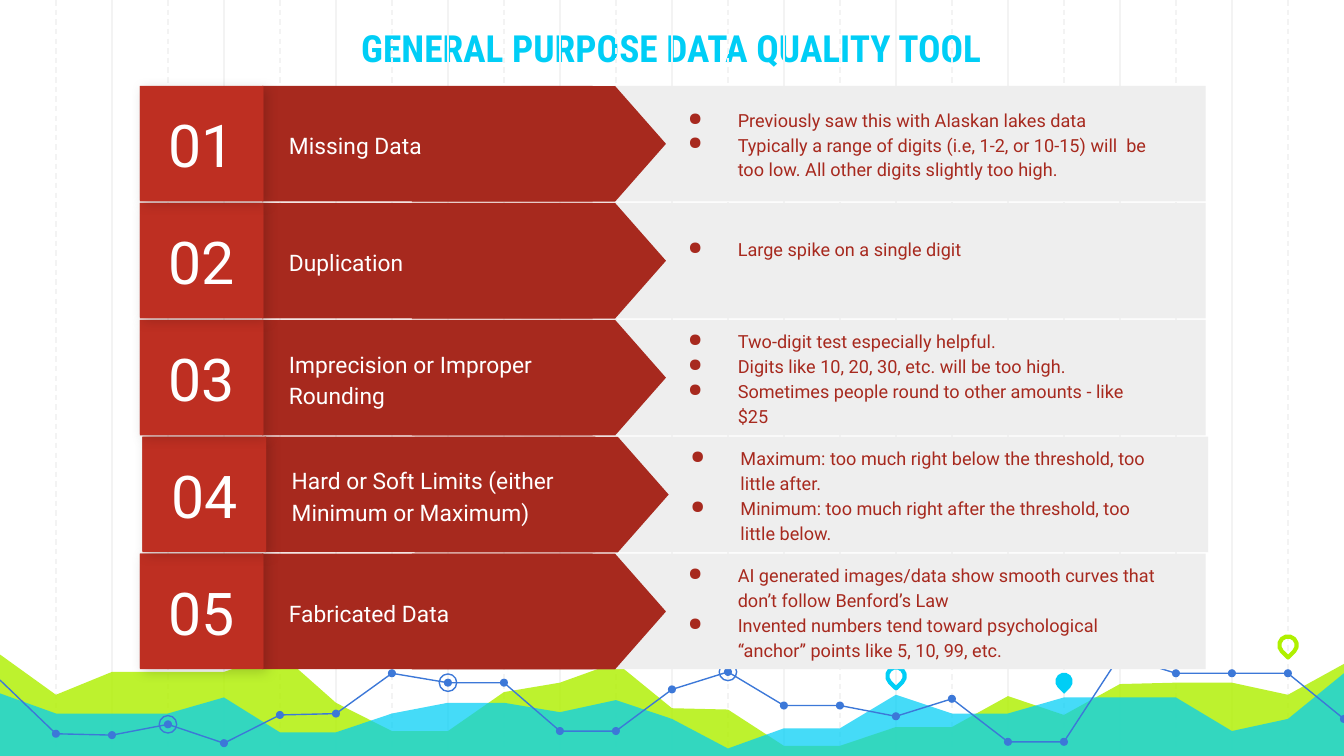
from lxml import etree
from pptx import Presentation
from pptx.dml.color import RGBColor
from pptx.enum.dml import MSO_LINE
from pptx.enum.shapes import MSO_CONNECTOR, MSO_SHAPE
from pptx.enum.text import MSO_ANCHOR, MSO_AUTO_SIZE, PP_ALIGN
from pptx.oxml.ns import qn
from pptx.util import Inches, Pt

RECT, OVAL, PIN = MSO_SHAPE.RECTANGLE, MSO_SHAPE.OVAL, MSO_SHAPE.TEAR
ARROW = MSO_SHAPE.FLOWCHART_OFFPAGE_CONNECTOR
CENTER, MIDDLE, BOTTOM = PP_ALIGN.CENTER, MSO_ANCHOR.MIDDLE, MSO_ANCHOR.BOTTOM

W, H = 10, 10 * 9 / 16
COLS = 24
COL = W / COLS
TOP, PITCH, ROW_H = 0.64, 0.87, 0.86
RED, BLUE, CYAN, LIME = "A7291E", "3C78D8", "00CEF6", "AFF000"

# Heights at each of the columns 0 to 24
LIME_HILLS = [4.87, 5.17, 5, 5, 5, 4.86, 5.23, 5.44, 5.44, 5.15, 5.08, 4.93, 5.27,
              5.28, 5.55, 5.55, 5.41, 5.41, 5.18, 5.32, 5.09, 5.08, 5.08, 5.17, 4.94]
CYAN_HILLS = [5.16, 5.31, 5.31, 5.31, 5.19, 5.45, 5.45, 5.31, 5.23, 5.23, 5.3, 5.21, 5.35,
              5.57, 5.42, 5.42, 5.17, 5.31, 5.31, 5.19, 5.19, 5.19, 5.44, 5.35, 5.01]
TREND = [5.06, 5.46, 5.47, 5.39, 5.53, 5.32, 5.31, 5.01, 5.08, 5.08, 5.44, 5.44, 5.13,
         5, 5.25, 5.25, 5.33, 5.2, 5.52, 5.52, 4.88, 5.01, 5.01, 5.01, 5.35]
PEAK = 20
RINGS = [3, 8, 13]

ROWS = [
    ("Missing Data", [
        "Previously saw this with Alaskan lakes data",
        "Typically a range of digits (i.e, 1-2, or 10-15) will  be too low. "
        "All other digits slightly too high."]),
    ("Duplication", ["Large spike on a single digit"]),
    ("Imprecision or Improper Rounding", [
        "Two-digit test especially helpful.",
        "Digits like 10, 20, 30, etc. will be too high.",
        "Sometimes people round to other amounts - like $25"]),
    ("Hard or Soft Limits (either Minimum or Maximum)", [
        "Maximum: too much right below the threshold, too little after.",
        "Minimum: too much right after the threshold, too little below."]),
    ("Fabricated Data", [
        "AI generated images/data show smooth curves that don’t follow Benford’s Law",
        "Invented numbers tend toward psychological “anchor” points like 5, 10, 99, etc."]),
]


def rgb(color):
    return RGBColor.from_string(color)


def paint(sp, fill=None, line=None, width=0.75, alpha=None):
    sp.shadow.inherit = False
    if fill:
        sp.fill.solid()
        sp.fill.fore_color.rgb = rgb(fill)
        if alpha:
            clr = sp.fill._xPr.find(qn("a:solidFill"))[0]
            etree.SubElement(clr, qn("a:alpha"), val=str(alpha * 1000))
    else:
        sp.fill.background()
    if line:
        sp.line.color.rgb = rgb(line)
        sp.line.width = Pt(width)
    else:
        sp.line.fill.background()


def add_shape(s, kind, x, y, w, h, rotation=0, **look):
    sp = s.shapes.add_shape(kind, Inches(x), Inches(y), Inches(w), Inches(h))
    sp.rotation = rotation
    paint(sp, **look)
    return sp


def add_marker(s, kind, col, y, size, **look):
    """Centre a small shape on a grid column."""
    add_shape(s, kind, col * COL - size / 2, y - size / 2, size, size, **look)


def add_path(s, points, close, **look):
    points = [(Inches(x), Inches(y)) for x, y in points]
    fb = s.shapes.build_freeform(*points[0])
    fb.add_line_segments(points[1:], close=close)
    paint(fb.convert_to_shape(), **look)


def column_points(heights):
    return [(i * COL, y) for i, y in enumerate(heights)]


def add_grid_line(s, col, dashed):
    x = Inches(col * COL)
    ln = s.shapes.add_connector(MSO_CONNECTOR.STRAIGHT, x, 0, x, Inches(H))
    ln.line.color.rgb = rgb("F3F3F3")
    ln.line.width = Pt(0.75)
    if dashed:
        ln.line.dash_style = MSO_LINE.DASH
    etree.SubElement(ln._element.spPr, qn("a:effectLst"))


def add_soft_shadow(sp):
    effects = sp._element.spPr.find(qn("a:effectLst"))
    shadow = etree.SubElement(effects, qn("a:outerShdw"), blurRad=str(Pt(6.8)),
                              dist=str(Pt(2.7)), dir="2700000", algn="bl", rotWithShape="0")
    clr = etree.SubElement(shadow, qn("a:srgbClr"), val="000000")
    etree.SubElement(clr, qn("a:alpha"), val="17000")


def set_frame(tf, inset, anchor):
    tf.word_wrap = True
    tf.auto_size = MSO_AUTO_SIZE.NONE
    tf.vertical_anchor = anchor
    tf.margin_left = tf.margin_right = tf.margin_top = tf.margin_bottom = Inches(inset)


def add_run(p, text, size, color, font="Roboto", bold=False):
    r = p.add_run()
    r.text = text
    r.font.size, r.font.name, r.font.bold = Pt(size), font, bold
    r.font.color.rgb = rgb(color)


def add_text_box(s, x, y, w, h):
    tf = s.shapes.add_textbox(Inches(x), Inches(y), Inches(w), Inches(h)).text_frame
    set_frame(tf, 0.12, MIDDLE)
    return tf


def set_bullet(p):
    pPr = p._p.get_or_add_pPr()
    pPr.set("marL", str(Inches(0.61)))
    pPr.set("indent", str(Inches(-0.37)))
    clr = etree.SubElement(pPr, qn("a:buClr"))
    etree.SubElement(clr, qn("a:srgbClr"), val=RED)
    etree.SubElement(pPr, qn("a:buChar"), char="●")


def add_bullets(s, items, x, y):
    tf = add_text_box(s, x, y, 3.96, 0.85)
    if len(items) == 1:
        tf.margin_bottom = Inches(0.31)
    for i, item in enumerate(items):
        p = tf.paragraphs[0] if i == 0 else tf.add_paragraph()
        p.line_spacing = 1.15
        set_bullet(p)
        add_run(p, item, 9.7, RED)


def add_row(s, number, label, items):
    x = 1.06 if number == 4 else 1.04
    y = TOP + (number - 1) * PITCH
    add_shape(s, RECT, x + 2.84, y, 5.09, ROW_H, fill="EEEEEE")
    add_shape(s, RECT, x + 0.91, y, 2.46, ROW_H, fill=RED)
    # Turned a quarter, so its box is upright around the same centre
    add_shape(s, ARROW, x + 2.54, y + (ROW_H - 1.89) / 2, ROW_H, 1.89, rotation=270, fill=RED)
    p = add_text_box(s, x + 0.99, y + 0.1, 2.58, 0.66).paragraphs[0]
    p.line_spacing = 1.15
    add_run(p, label, 12.2, "FFFFFF")
    add_soft_shadow(add_shape(s, RECT, x, y, 0.92, 0.85, fill="B02B20"))
    tf = add_shape(s, RECT, x, y, 0.92, ROW_H, fill="BE2F22").text_frame
    set_frame(tf, 0.12, MIDDLE)
    tf.paragraphs[0].alignment = CENTER
    add_run(tf.paragraphs[0], f"{number:02}", 31.6, "FFFFFF")
    add_bullets(s, items, x + 3.72, y)


def add_backdrop(s):
    for first, dashed in ((2, False), (1, True)):
        for col in range(first, COLS, 2):
            add_grid_line(s, col, dashed)
    for heights, color, alpha in ((LIME_HILLS, LIME, 82), (CYAN_HILLS, CYAN, 73)):
        add_path(s, column_points(heights) + [(W, H), (0, H)], True, fill=color, alpha=alpha)
    add_marker(s, PIN, 16, 5.03, 0.13, rotation=135, line=CYAN, width=2.25)
    add_marker(s, PIN, 19, 5.07, 0.13, rotation=135, fill=CYAN)
    add_marker(s, PIN, 23, 4.8, 0.13, rotation=135, line=LIME, width=2.25)
    add_path(s, column_points(TREND), False, line=BLUE)
    for col, y in enumerate(TREND):
        if col not in (0, PEAK):
            add_marker(s, OVAL, col, y, 0.06, fill=BLUE)
    for col in RINGS:
        add_marker(s, OVAL, col, TREND[col], 0.13, line=BLUE)


def set_title(s, text):
    sp = s.shapes.title
    sp.left, sp.top, sp.width, sp.height = map(Inches, (1.17, -0.16, 7.65, 0.78))
    set_frame(sp.text_frame, 0.1, BOTTOM)
    p = sp.text_frame.paragraphs[0]
    p.alignment = CENTER
    add_run(p, text, 20, CYAN, "Roboto Condensed", True)


def main():
    prs = Presentation()
    prs.slide_width, prs.slide_height = Inches(W), Inches(H)
    s = prs.slides.add_slide(prs.slide_layouts[5])
    set_title(s, "GENERAL PURPOSE DATA QUALITY TOOL")
    add_backdrop(s)
    for number, (label, items) in reversed(list(enumerate(ROWS, 1))):
        add_row(s, number, label, items)
    prs.save("out.pptx")


if __name__ == "__main__":
    main()
